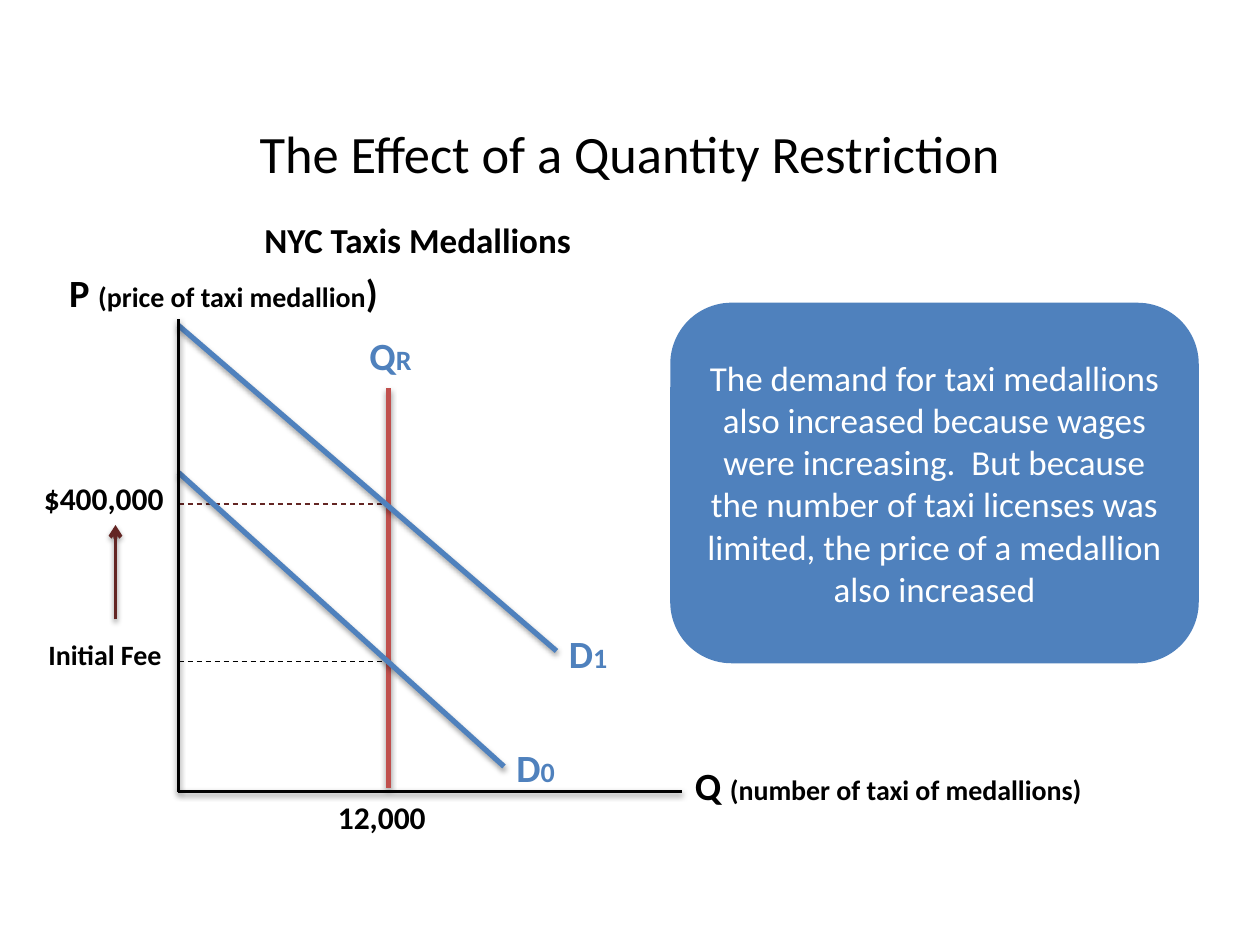
import lxml.etree
import pptx
import pptx.dml.color
import pptx.enum.dml
import pptx.enum.shapes
import pptx.enum.text
import pptx.oxml.ns
import pptx.util

COLORS = {"ink": "000000", "demand": "4F81BD", "limit": "C0504D",
          "price": "632523", "paper": "FFFFFF"}
FONT = "Calibri"
CELL = pptx.util.Inches(1) / 12  # the slide is a grid of 120 columns by 90 rows
CENTER = pptx.enum.text.PP_ALIGN.CENTER
MIDDLE = pptx.enum.text.MSO_ANCHOR.MIDDLE


def cells(*counts):
    return [round(count * CELL) for count in counts]


def color(name):
    return pptx.dml.color.RGBColor.from_string(COLORS[name])


def add_runs(paragraph, runs, ink, bold):
    for words, size in runs:
        run = paragraph.add_run()
        run.text = words
        run.font.name = FONT
        run.font.size = pptx.util.Pt(size)
        run.font.bold = bold
        run.font.color.rgb = color(ink)


def add_child(parent, tag, **attributes):
    return lxml.etree.SubElement(parent, pptx.oxml.ns.qn(tag), attributes)


def add_line(slide, box, start, end, ink, width, dashed=False, arrow=False):
    """Draw a line between two points of the box; solid lines cast a soft shadow."""
    left, top = box[:2]
    line = slide.shapes.add_connector(
        pptx.enum.shapes.MSO_CONNECTOR.STRAIGHT,
        *cells(left + start[0], top + start[1], left + end[0], top + end[1]))
    line.line.color.rgb = color(ink)
    line.line.width = pptx.util.Pt(width)
    if dashed:
        line.line.dash_style = pptx.enum.dml.MSO_LINE.DASH
    if arrow:
        add_child(line.line._get_or_add_ln(), "a:tailEnd", type="arrow")
    effects = add_child(line._element.spPr, "a:effectLst")
    if not dashed:
        shadow = add_child(effects, "a:outerShdw", blurRad="40000", dist="20000",
                           dir="5400000", rotWithShape="0")
        shade = add_child(shadow, "a:srgbClr", val=COLORS["ink"])
        add_child(shade, "a:alpha", val="38000")


def add_label(slide, box, place, width, runs, ink="ink", align=None):
    left, top = box[:2]
    height = 5.6 if runs[0][1] > 20 else 4.8
    label = slide.shapes.add_textbox(
        *cells(left + place[0], top + place[1], width, height))
    label.text_frame.word_wrap = True
    paragraph = label.text_frame.paragraphs[0]
    paragraph.alignment = align
    add_runs(paragraph, runs, ink, True)


def place_title(slide, box, words):
    title = slide.shapes.title
    title.left, title.top, title.width, title.height = cells(*box)
    title.text_frame.vertical_anchor = MIDDLE
    paragraph = title.text_frame.paragraphs[0]
    paragraph.alignment = CENTER
    add_runs(paragraph, [(words, 30)], "ink", False)


def draw_market(slide, box):
    """Plot demand against the quota; the box is the area between the axes."""
    width, height = box[2:]
    quota, new_price, initial_price = 20, 18, 33

    for price, ink in ((new_price, "price"), (initial_price, "ink")):
        add_line(slide, box, (0, price), (quota, price), ink, 0.75, dashed=True)
    add_line(slide, box, (0, height), (width, height), "ink", 2)
    add_line(slide, box, (quota, height - 0.4), (quota, 7), "limit", 3)
    for start, end in (((0, 15), (31, 43)), ((0, 1), (36, 32))):
        add_line(slide, box, start, end, "demand", 3)
    add_line(slide, box, (-6, 29), (-6, 20), "price", 2.25, arrow=True)
    add_line(slide, box, (0, 0.4), (0, height), "ink", 2)

    for letter, index, place in (("Q", "R", (quota - 3, 1)),
                                 ("D", "0", (31, 40.3)), ("D", "1", (36, 29.4))):
        add_label(slide, box, place, 10, [(letter, 22), (index, 16)], "demand")
    add_label(slide, box, (7, -9.8), 37, [("NYC Taxis Medallions", 20)])
    add_label(slide, box, (-11.6, -5), 58,
              [("P ", 22), ("(price of taxi medallion", 16), (")", 22)])
    add_label(slide, box, (width, height - 3.4), 48,
              [("Q ", 22), ("(number of taxi of medallions)", 16)])
    add_label(slide, box, (quota - 6, height), 12, [("12,000", 18)])
    add_label(slide, box, (-14, new_price - 3), 19, [("$400,000", 18)])
    add_label(slide, box, (-17, initial_price - 2.9), 20,
              [("Initial Fee", 16)], align=CENTER)


def add_explanation(slide, box, words):
    panel = slide.shapes.add_shape(
        pptx.enum.shapes.MSO_SHAPE.ROUNDED_RECTANGLE, *cells(*box))
    panel.shadow.inherit = False
    panel.fill.solid()
    panel.fill.fore_color.rgb = color("demand")
    panel.line.color.rgb = color("demand")
    panel.line.width = pptx.util.Pt(2)
    panel.text_frame.word_wrap = True
    panel.text_frame.vertical_anchor = MIDDLE
    paragraph = panel.text_frame.paragraphs[0]
    paragraph.alignment = CENTER
    add_runs(paragraph, [(words, 20)], "paper", False)


def main():
    deck = pptx.Presentation()
    deck.slide_width, deck.slide_height = cells(120, 90)
    slide = deck.slides.add_slide(deck.slide_layouts.get_by_name("Title Only"))
    place_title(slide, (3, 10, 114, 9), "The Effect of a Quantity Restriction")
    draw_market(slide, (17, 30, 48, 45.4))
    add_explanation(
        slide, (64, 29, 50, 34),
        "The demand for taxi medallions also increased because wages were "
        "increasing.  But because the number of taxi licenses was limited, "
        "the price of a medallion also increased")
    deck.save("out.pptx")


if __name__ == "__main__":
    main()
